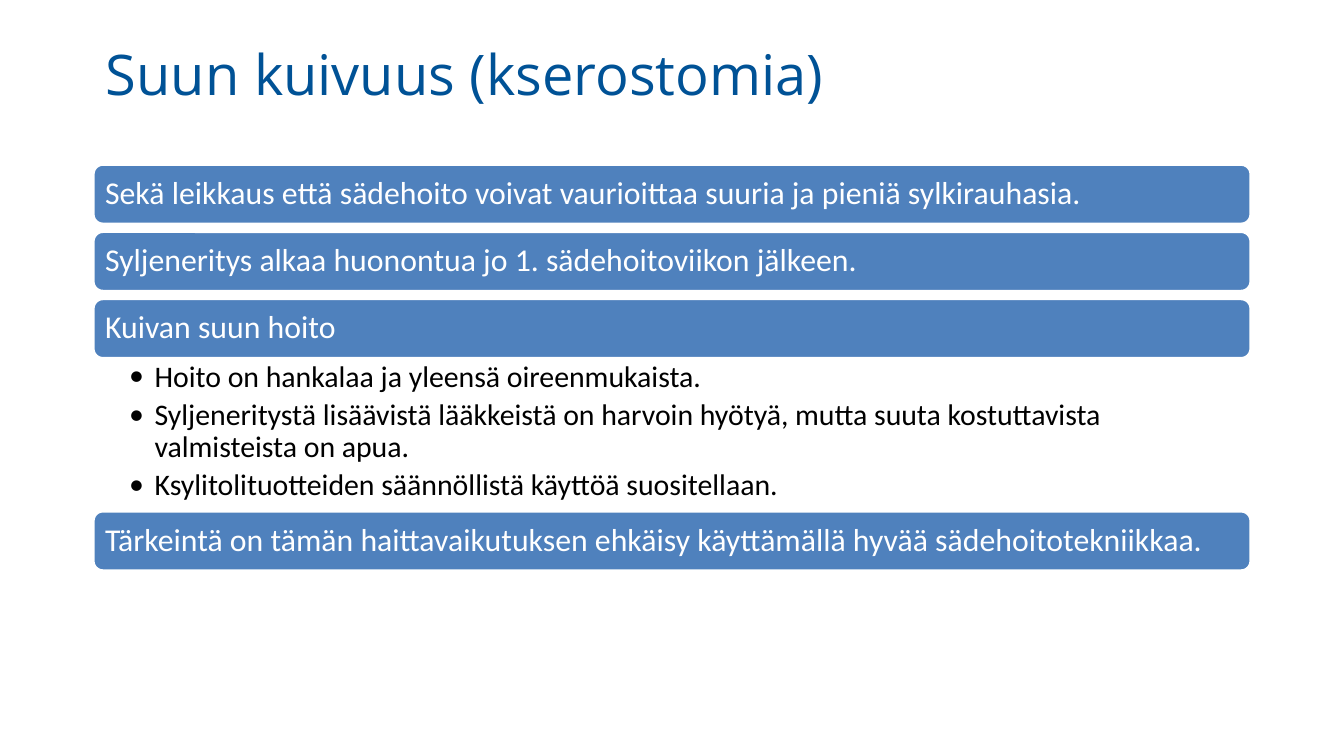
from pptx import Presentation
from pptx.dml.color import RGBColor
from pptx.enum.shapes import MSO_SHAPE
from pptx.enum.text import MSO_ANCHOR, PP_ALIGN
from pptx.oxml.xmlchemy import OxmlElement
from pptx.util import Inches, Pt

COLORS = {"title": "005296", "bar": "4F81BD", "white": "FFFFFF", "black": "000000"}
LEFT, WIDTH, BAR_HEIGHT = 0.69, 8.62, 0.45


def write_text(shape, lines, size, color, font="Calibri", insets=(0.07, 0.07, 0.07, 0.07),
               anchor=MSO_ANCHOR.MIDDLE, line_spacing=0.9, space_after=0, bullet=None):
    frame = shape.text_frame
    frame.word_wrap = True
    frame.vertical_anchor = anchor
    frame.margin_left, frame.margin_top, frame.margin_right, frame.margin_bottom = map(Inches, insets)
    for index, line in enumerate(lines):
        paragraph = frame.paragraphs[0] if index == 0 else frame.add_paragraph()
        paragraph.alignment = PP_ALIGN.LEFT
        paragraph.line_spacing = line_spacing
        paragraph.space_after = Pt(space_after)
        if bullet:
            properties = paragraph._p.get_or_add_pPr()
            properties.set("marL", str(Inches(0.19)))
            properties.set("indent", str(Inches(-0.19)))
            for tag, attribute, value in (("a:buFont", "typeface", font), ("a:buChar", "char", bullet)):
                element = OxmlElement(tag)
                element.set(attribute, value)
                properties.append(element)
        run = paragraph.add_run()
        run.text = line
        run.font.name = font
        run.font.size = Pt(size)
        run.font.color.rgb = RGBColor.from_string(COLORS[color])


presentation = Presentation()
presentation.slide_width = Inches(10)
presentation.slide_height = Inches(10) * 9 // 16
slide = presentation.slides.add_slide(presentation.slide_layouts[6])

title = slide.shapes.add_textbox(Inches(LEFT), Inches(0.24), Inches(WIDTH), Inches(0.61))
write_text(title, ["Suun kuivuus (kserostomia)"], size=30, color="title", font="Open Sans",
           insets=(0.1, 0.05, 0.1, 0.05), line_spacing=1)

bars = [
    (1.22, "Sekä leikkaus että sädehoito voivat vaurioittaa suuria ja pieniä sylkirauhasia."),
    (1.72, "Syljeneritys alkaa huonontua jo 1. sädehoitoviikon jälkeen."),
    (2.22, "Kuivan suun hoito"),
    (3.8, "Tärkeintä on tämän haittavaikutuksen ehkäisy käyttämällä hyvää sädehoitotekniikkaa."),
]
for top, text in bars:
    bar = slide.shapes.add_shape(MSO_SHAPE.ROUNDED_RECTANGLE, Inches(LEFT), Inches(top),
                                 Inches(WIDTH), Inches(BAR_HEIGHT))
    bar.shadow.inherit = False
    bar.fill.solid()
    bar.fill.fore_color.rgb = RGBColor.from_string(COLORS["bar"])
    bar.line.color.rgb = RGBColor.from_string(COLORS["white"])
    bar.line.width = Pt(2)
    write_text(bar, [text], size=17, color="white")

treatments = [
    "Hoito on hankalaa ja yleensä oireenmukaista.",
    "Syljeneritystä lisäävistä lääkkeistä on harvoin hyötyä, mutta suuta kostuttavista valmisteista on apua.",
    "Ksylitolituotteiden säännöllistä käyttöä suositellaan.",
]
treatment_list = slide.shapes.add_textbox(Inches(LEFT), Inches(2.67), Inches(WIDTH), Inches(1.14))
write_text(treatment_list, treatments, size=16, color="black", insets=(0.27, 0.02, 0.12, 0.02),
           anchor=MSO_ANCHOR.TOP, space_after=3.2, bullet="•")

presentation.save("out.pptx")
